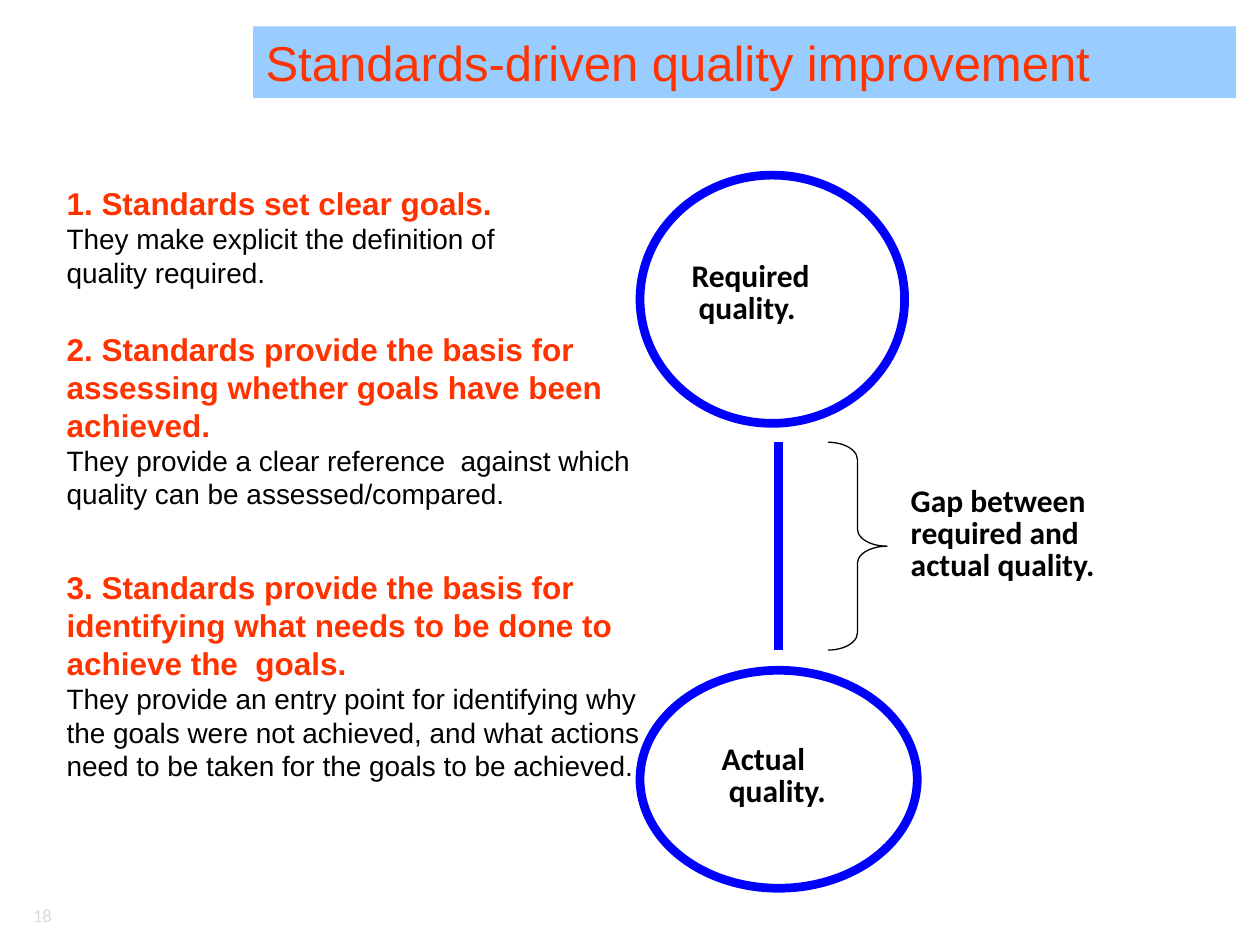
from pptx import Presentation
from pptx import util as u
from pptx.dml.color import RGBColor
from pptx.enum import shapes, text
from lxml import etree

RED, BLUE, BLACK = "FF3300", "0000FF", "000000"
HEADING = {"size": u.Pt(18), "name": "Arial", "bold": True}
BODY = {"size": u.Pt(16), "name": "Arial", "bold": False}
LABEL = {"size": u.Pt(18), "name": "Calibri", "bold": True}
TITLE = {"size": u.Pt(28), "name": "Arial"}
NUMBER = {"size": u.Pt(10.5), "name": "Calibri"}
MIDDLE = {"vertical_anchor": text.MSO_ANCHOR.MIDDLE}

STANDARDS = [
    ((0.43, 1.41, 4.17, 0.94), ["1. Standards set clear goals."],
     "They make explicit the definition of quality required."),
    ((0.43, 2.57, 4.88, 1.6),
     ["2. Standards provide the basis for assessing whether goals have been achieved."],
     "They provide a clear reference  against which quality can be assessed/compared."),
    ((0.43, 4.46, 4.88, 1.82),
     ["3. Standards provide the basis for",
      "identifying what needs to be done to achieve the  goals."],
     "They provide an entry point for identifying why the goals were not achieved, "
     "and what actions need to be taken for the goals to be achieved."),
]
CIRCLES = [
    ((5.08, 1.39, 2.1, 1.97), (5.39, 2.03, 1.57, 0.61), "Required\v quality."),
    ((5.08, 5.32, 2.2, 1.73), (5.63, 5.86, 1.26, 0.61), "Actual\v quality."),
]


def color(value):
    """Turn a hex string into a colour."""
    return RGBColor.from_string(value)


def inches(box):
    """Turn a sequence of numbers into lengths."""
    return [u.Inches(value) for value in box]


def set_all(target, values):
    """Set each named attribute on the target."""
    for name, value in values.items():
        setattr(target, name, value)


def write(frame, lines, frame_format=None, paragraph_format=None):
    """Fill a text frame with (wording, font, colour) paragraphs."""
    set_all(frame, {"word_wrap": True, **(frame_format or {})})
    for index, (wording, font, hue) in enumerate(lines):
        paragraph = frame.add_paragraph() if index else frame.paragraphs[0]
        paragraph.text = wording
        set_all(paragraph, {"alignment": text.PP_ALIGN.LEFT, **(paragraph_format or {})})
        set_all(paragraph.font, font)
        paragraph.font.color.rgb = color(hue)


def add_text(slide, box, lines, frame_format=None, paragraph_format=None):
    """Add a text box."""
    shape = slide.shapes.add_textbox(*inches(box))
    write(shape.text_frame, lines, frame_format, paragraph_format)


def add_label(slide, box, wording):
    """Add a bold, tightly spaced diagram label."""
    add_text(slide, box, [(wording, LABEL, BLACK)], MIDDLE, {"line_spacing": 0.85})


def add_outline(slide, kind, box, hue, width):
    """Add an unfilled preset shape."""
    shape = slide.shapes.add_shape(kind, *inches(box))
    shape.shadow.inherit = False
    shape.fill.background()
    shape.line.color.rgb = color(hue)
    shape.line.width = u.Pt(width)
    return shape


def add_title(slide, box):
    """Add the title band."""
    band = slide.shapes.add_shape(shapes.MSO_SHAPE.RECTANGLE, *inches(box))
    band.shadow.inherit = False
    band.fill.solid()
    band.fill.fore_color.rgb = color("99CCFF")
    band.line.fill.background()
    write(band.text_frame, [("Standards-driven quality improvement", TITLE, RED)],
          {"vertical_anchor": text.MSO_ANCHOR.TOP})


def add_standard(slide, box, headings, body):
    """Add one numbered standard with its explanation."""
    lines = [(heading, HEADING, RED) for heading in headings]
    add_text(slide, box, lines + [(body, BODY, BLACK)])


def add_circle(slide, box, label_box, wording):
    """Add a quality circle and its label."""
    add_outline(slide, shapes.MSO_SHAPE.OVAL, box, BLUE, 5)
    add_label(slide, label_box, wording)


def add_gap(slide, box):
    """Add the gap line, its brace and its label within the box."""
    left, top, width, height = box
    line = slide.shapes.add_connector(
        shapes.MSO_CONNECTOR.STRAIGHT, *inches((left, top + height, left, top)))
    line.line.color.rgb = color(BLUE)
    line.line.width = u.Pt(5)
    properties = line.line._get_or_add_ln().getparent()
    namespace = "http://schemas.openxmlformats.org/drawingml/2006/main"
    etree.SubElement(properties, f"{{{namespace}}}effectLst")
    brace = add_outline(slide, shapes.MSO_SHAPE.RIGHT_BRACE,
                        (left + 0.39, top, 0.47, height), BLACK, 0.75)
    brace.adjustments[0] = 0.29
    brace.adjustments[1] = 0.5
    add_label(slide, (left + 0.95, top + 0.3, width - 0.95, 0.87),
              "Gap between required and actual quality.")


def add_page_number(slide, box):
    """Add the page number."""
    margins = {f"margin_{side}": 0 for side in ("left", "top", "right", "bottom")}
    add_text(slide, box, [("18", NUMBER, "D9D9D9")], {**MIDDLE, **margins},
             {"alignment": text.PP_ALIGN.RIGHT})


def main():
    """Build and save the slide."""
    presentation = Presentation()
    set_all(presentation, {"slide_width": u.Inches(10), "slide_height": u.Inches(7.5)})
    slide = presentation.slides.add_slide(presentation.slide_layouts[6])
    add_page_number(slide, (0.12, 7.14, 0.29, 0.24))
    add_title(slide, (2.01, 0.21, 7.8, 0.57))
    for standard in STANDARDS:
        add_standard(slide, *standard)
    for circle in CIRCLES:
        add_circle(slide, *circle)
    add_gap(slide, (6.18, 3.51, 3.15, 1.65))
    presentation.save("out.pptx")


if __name__ == "__main__":
    main()
